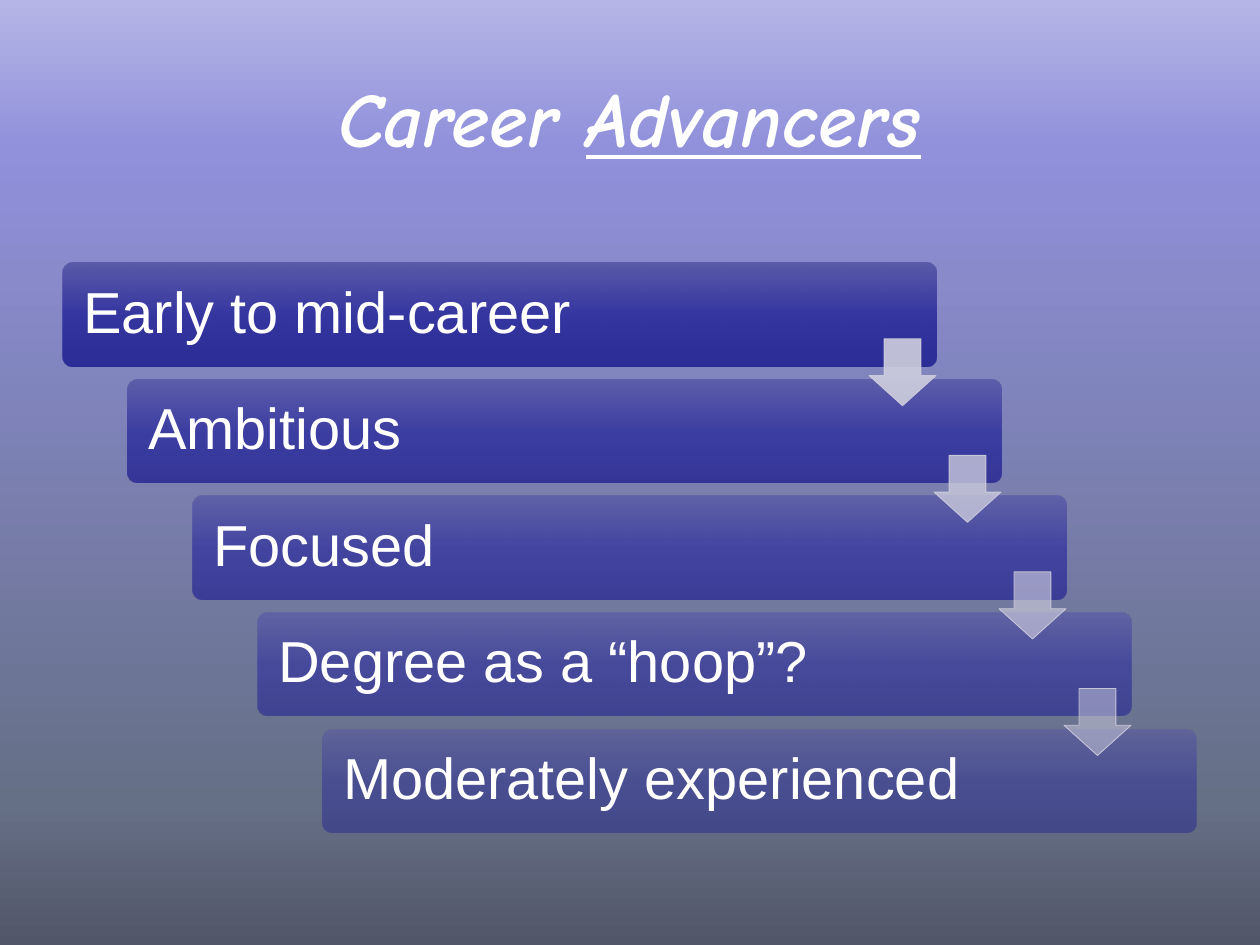
from lxml.etree import SubElement
from pptx import Presentation
from pptx.dml.color import RGBColor
from pptx.enum.shapes import MSO_SHAPE as Shape
from pptx.enum.text import MSO_ANCHOR as Anchor, PP_ALIGN as Align
from pptx.oxml.ns import qn
from pptx.util import Cm, Pt

WHITE = RGBColor(0xFF, 0xFF, 0xFF)
ARROW = RGBColor(0xCE, 0xCE, 0xDE)
BACKDROP = [
    (0, RGBColor(0x52, 0x56, 0x69)),
    (15, RGBColor(0x65, 0x6F, 0x86)),
    (84, RGBColor(0x90, 0x90, 0xDB)),
    (100, RGBColor(0xB5, 0xB5, 0xE7)),
]
BAR = [
    (0, RGBColor(0x56, 0x56, 0xA6)),
    (50, RGBColor(0x2E, 0x2E, 0x9E)),
    (100, RGBColor(0x24, 0x24, 0x91)),
]

TITLE_FONT = {"name": "Comic Neue", "size": Pt(44), "bold": True, "italic": True}
BAR_FONT = {"name": "Arial", "size": Pt(33)}

# Text, bar opacity and opacity of the arrow leading to the next bar (percent)
STEPS = [
    ("Early to mid-career", 90, 90),
    ("Ambitious", 80, 77),
    ("Focused", 70, 63),
    ("Degree as a “hoop”?", 60, 50),
    ("Moderately experienced", 50, None),
]
LEFT, TOP = 1.27, 5.3
BAR_W, BAR_H = 17.6, 2.08
STEP_X, STEP_Y = 1.31, 2.35
ARROW_SIZE, ARROW_DROP = 1.35, 1.53


def set_alpha(color, percent):
    SubElement(color, qn("a:alpha"), val=str(percent * 1000))


def set_gradient(fill, element, stops, angle, alpha=100):
    """Fill with any number of stops; angle runs counter-clockwise."""
    fill.gradient()
    fill.gradient_angle = angle
    gs_list = next(element.iter(qn("a:gsLst")))
    gs_list.clear()
    for pos, rgb in stops:
        gs = SubElement(gs_list, qn("a:gs"), pos=str(pos * 1000))
        color = SubElement(gs, qn("a:srgbClr"), val=str(rgb))
        if alpha < 100:
            set_alpha(color, alpha)


def add_run(p, text, font):
    r = p.add_run()
    r.text = text
    for name, value in font.items():
        setattr(r.font, name, value)
    r.font.color.rgb = WHITE


def add_title(s):
    tf = s.shapes.add_textbox(Cm(1.27), Cm(0.76), Cm(22.86), Cm(3.18)).text_frame
    tf.word_wrap = True
    tf.vertical_anchor = Anchor.MIDDLE
    p = tf.paragraphs[0]
    p.alignment = Align.CENTER
    add_run(p, "Career ", TITLE_FONT)
    add_run(p, "Advancers", {**TITLE_FONT, "underline": True})


def add_bar(s, x, y, text, alpha):
    sp = s.shapes.add_shape(Shape.ROUNDED_RECTANGLE, Cm(x), Cm(y), Cm(BAR_W), Cm(BAR_H))
    sp.shadow.inherit = False
    sp.adjustments[0] = 0.1
    sp.line.fill.background()
    set_gradient(sp.fill, sp.element, BAR, 270, alpha)
    tf = sp.text_frame
    frame = {"word_wrap": True, "vertical_anchor": Anchor.MIDDLE}
    frame.update({f"margin_{side}": Cm(0.35) for side in ("left", "top", "right", "bottom")})
    for name, value in frame.items():
        setattr(tf, name, value)
    p = tf.paragraphs[0]
    p.alignment = Align.LEFT
    p.line_spacing = 0.9
    add_run(p, text, BAR_FONT)


def add_arrow(s, x, y, alpha):
    sp = s.shapes.add_shape(Shape.DOWN_ARROW, Cm(x), Cm(y), Cm(ARROW_SIZE), Cm(ARROW_SIZE))
    sp.shadow.inherit = False
    sp.adjustments[0] = 0.55
    sp.adjustments[1] = 0.45
    sp.line.width = Pt(0.5)
    sp.fill.solid()
    sp.fill.fore_color.rgb = ARROW
    sp.line.color.rgb = ARROW
    fill_color, line_color = sp.element.spPr.iter(qn("a:srgbClr"))
    set_alpha(fill_color, alpha)
    set_alpha(line_color, 90)


def main():
    prs = Presentation()
    prs.slide_width, prs.slide_height = Cm(25.4), Cm(19.05)
    s = prs.slides.add_slide(prs.slide_layouts[6])
    set_gradient(s.background.fill, s.element, BACKDROP, 90)
    add_title(s)

    places = [(LEFT + i * STEP_X, TOP + i * STEP_Y) for i in range(len(STEPS))]
    for (x, y), (text, alpha, _) in zip(places, STEPS):
        add_bar(s, x, y, text, alpha)
    for (x, y), (_, _, alpha) in zip(places[:-1], STEPS):
        add_arrow(s, x + BAR_W - ARROW_SIZE, y + ARROW_DROP, alpha)
    prs.save("out.pptx")


if __name__ == "__main__":
    main()
